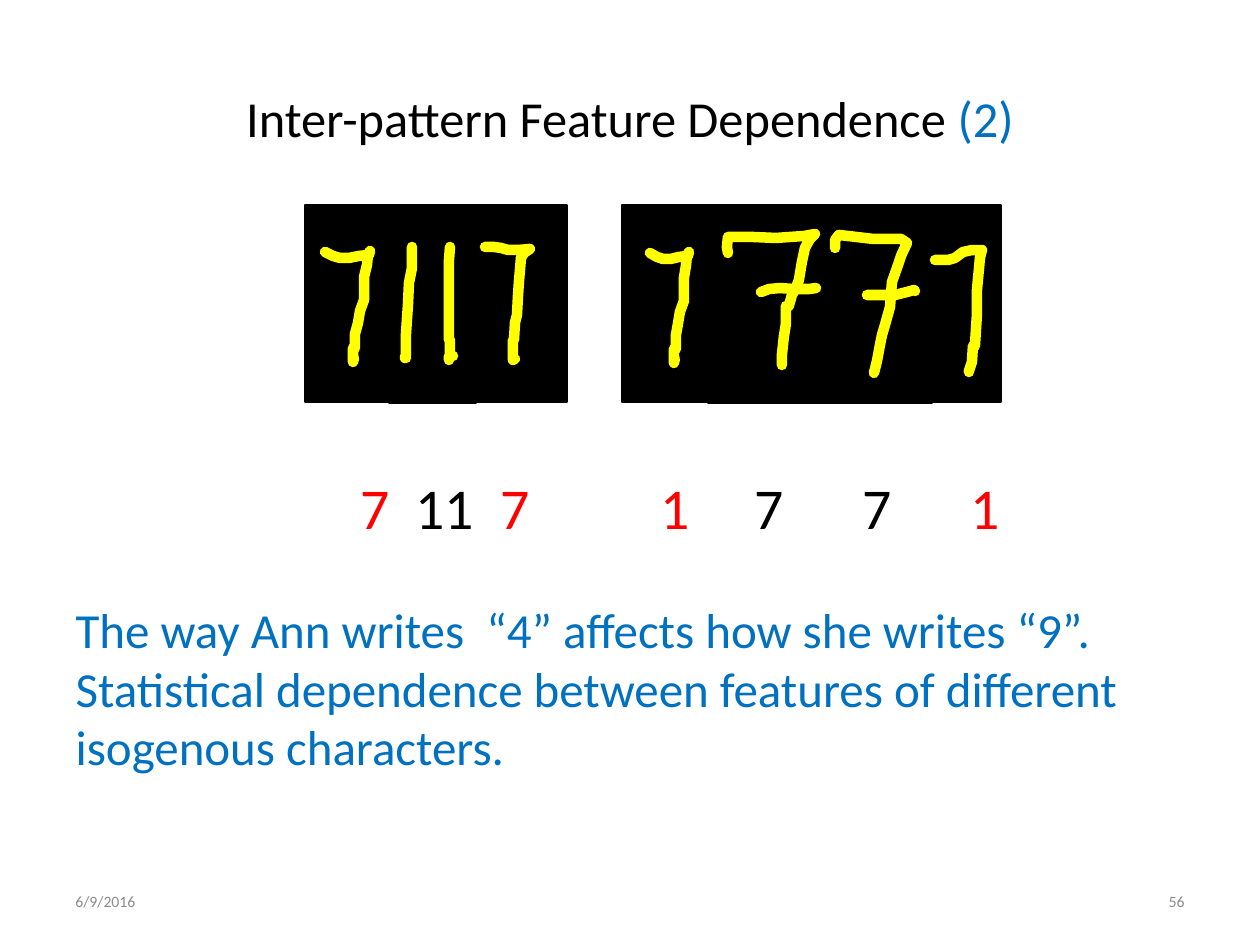
from lxml import etree
from pptx import Presentation
from pptx import util as u
from pptx.dml.color import RGBColor
from pptx.enum import shapes, text
from pptx.oxml.ns import qn

PX = 914400 / 126
FONT = "Calibri"
INK = {"black": "000000", "blue": "0070C0", "red": "FF0000",
       "gray": "8C8C8C", "pen": "FFFF00"}

# Content: runs are (words, colour)
TITLE = [("Inter-pattern Feature Dependence", "black"), (" (2)", "blue")]
BODY = ["The way Ann writes  “4” affects how she writes “9”.",
        "Statistical dependence between features of different",
        "isogenous characters."]
DIGITS = [("7", "red"), ("11", "black"), ("7", "red"), ("1", "red"),
          ("7", "black"), ("7", "black"), ("1", "red")]
STOPS = [55, 140, 300, 394, 502, 610]
FOOT = [("6/9/2016", 63, text.PP_ALIGN.LEFT), ("56", 903, text.PP_ALIGN.RIGHT)]

# Black panels: left, top, width, height
PANELS = [(305, 205, 262, 197), (622, 205, 379, 197),
          (708, 205, 224, 198), (389, 205, 87, 198)]

# Pen strokes, relative to their start
HOOK = [(0, 0), (8, 4), (15, 6), (24, 6), (34, 4), (44, 3), (45, -1), (43, 3),
        (42, 13), (39, 25), (39, 48), (35, 59), (33, 71), (30, 82), (30, 96),
        (28, 96), (28, 110), (29, 106)]
FLAG = [(0, 0), (9, 0), (16, 1), (23, 3), (34, 3), (45, 2), (39, 6), (36, 11),
        (35, 23), (34, 34), (33, 49), (32, 68), (30, 76), (29, 93), (28, 93),
        (28, 113), (30, 112)]
LAST = [(0, 0), (13, 0), (20, -2), (28, -8), (37, -10), (47, -10), (45, -2),
        (44, 9), (42, 30), (42, 54), (40, 86), (38, 86), (37, 102), (34, 111),
        (34, 112)]
BAR_1 = [(0, 0), (0, 21), (-3, 36), (-4, 58), (-5, 72), (-6, 87), (-6, 107),
         (-7, 111), (-6, 111)]
BAR_2 = [(0, 0), (-1, 13), (-1, 93), (0, 93), (0, 106), (-1, 113),
         (-1, 109), (3, 109)]
TALL_1 = [(0, 0), (-1, -6), (0, -16), (25, -16), (48, -15), (76, -17), (87, -19),
          (82, -14), (77, -5), (74, 9), (71, 27), (68, 35), (64, 42), (61, 53),
          (58, 53), (58, 71), (56, 83), (54, 102), (54, 112)]
DASH_1 = [(0, 0), (8, -3), (19, -4), (33, -3), (48, -3), (55, -4)]
TALL_2 = [(0, 0), (0, -8), (4, -13), (21, -11), (38, -9), (66, -9), (72, -5),
          (66, 8), (62, 20), (57, 34), (55, 59), (50, 77), (47, 87), (45, 97),
          (42, 113), (40, 121), (39, 125)]
DASH_2 = [(0, 0), (28, 0), (40, -3), (47, -5), (48, -4)]

# Left, top, width factor, stroke
PEN = [(325, 252, 1, HOOK), (650, 253, 0.86, HOOK), (935, 260, 1, LAST),
       (485, 247, 1, FLAG), (412, 247, 1, BAR_1), (728, 253, 1, TALL_1),
       (761, 292, 1, DASH_1), (835, 248, 1, TALL_2), (867, 295, 1, DASH_2),
       (450, 247, 1, BAR_2)]


def paint(name):
    return RGBColor.from_string(INK[name])


def px(*vals):
    return [u.Emu(round(v * PX)) for v in vals]


def place(shape, *box):
    shape.left, shape.top, shape.width, shape.height = px(*box)


def write(para, runs, size):
    for words, tone in runs:
        run = para.add_run()
        run.text = words
        run.font.name, run.font.size = FONT, u.Pt(size)
        run.font.color.rgb = paint(tone)


def add_box(slide, *box):
    frame = slide.shapes.add_textbox(*px(*box)).text_frame
    frame.word_wrap = True
    return frame


def add_panel(slide, box):
    rect = slide.shapes.add_shape(shapes.MSO_SHAPE.RECTANGLE, *px(*box))
    rect.shadow.inherit = False
    rect.fill.solid()
    rect.fill.fore_color.rgb = paint("black")
    rect.line.color.rgb = paint("black")
    rect.line.width = u.Pt(1)


def add_stroke(slide, x, y, wide, pts):
    spots = [(x + wide * dx, y + dy) for dx, dy in pts]
    form = slide.shapes.build_freeform(*spots[0], scale=PX)
    form.add_line_segments(spots[1:], close=False)
    mark = form.convert_to_shape()
    mark.shadow.inherit = False
    mark.fill.background()
    mark.line.color.rgb = paint("pen")
    mark.line.width = u.Pt(6)
    line = mark.line._get_or_add_ln()
    line.set("cap", "rnd")
    etree.SubElement(line, qn("a:round"))


def main():
    deck = Presentation()
    deck.slide_width, deck.slide_height = px(1260, 945)
    slide = deck.slides.add_slide(deck.slide_layouts[1])

    # Title
    head = slide.shapes.title
    place(head, 63, 38, 1134, 158)
    write(head.text_frame.paragraphs[0], TITLE, 28.8)

    # Handwritten digits
    for box in PANELS:
        add_panel(slide, box)
    for stroke in PEN:
        add_stroke(slide, *stroke)

    # Digit labels on tab stops
    para = add_box(slide, 348, 466, 699, 83).paragraphs[0]
    tabs = etree.SubElement(para._p.get_or_add_pPr(), qn("a:tabLst"))
    for stop in STOPS:
        etree.SubElement(tabs, qn("a:tab"), pos=str(px(stop)[0]), algn="l")
    for i, (words, tone) in enumerate(DIGITS):
        write(para, [("\t" + words if i else words, tone)], 33)

    # Body
    body = slide.placeholders[1]
    place(body, 63, 593, 1090, 190)
    frame = body.text_frame
    frame.auto_size = text.MSO_AUTO_SIZE.NONE
    for i, words in enumerate(BODY):
        para = frame.add_paragraph() if i else frame.paragraphs[0]
        para.space_before = u.Pt(0)
        props = para._p.get_or_add_pPr()
        props.set("marL", "0")
        props.set("indent", "0")
        etree.SubElement(props, qn("a:buNone"))
        write(para, [(words, "blue")], 28)

    # Date and slide number
    for words, left, side in FOOT:
        frame = add_box(slide, left, 876, 294, 50)
        frame.vertical_anchor = text.MSO_ANCHOR.MIDDLE
        frame.paragraphs[0].alignment = side
        write(frame.paragraphs[0], [(words, "gray")], 9)

    deck.save("out.pptx")


if __name__ == "__main__":
    main()
